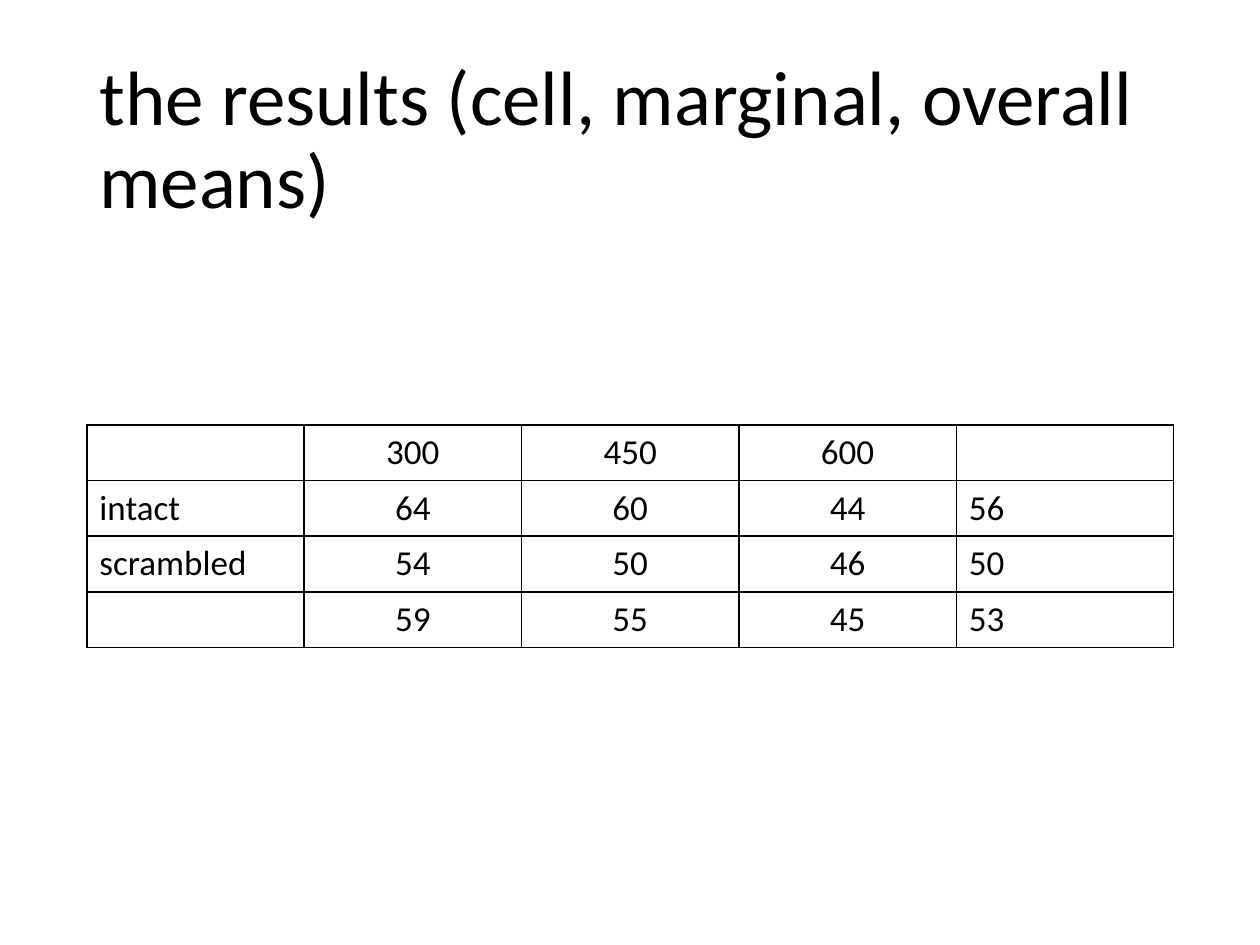
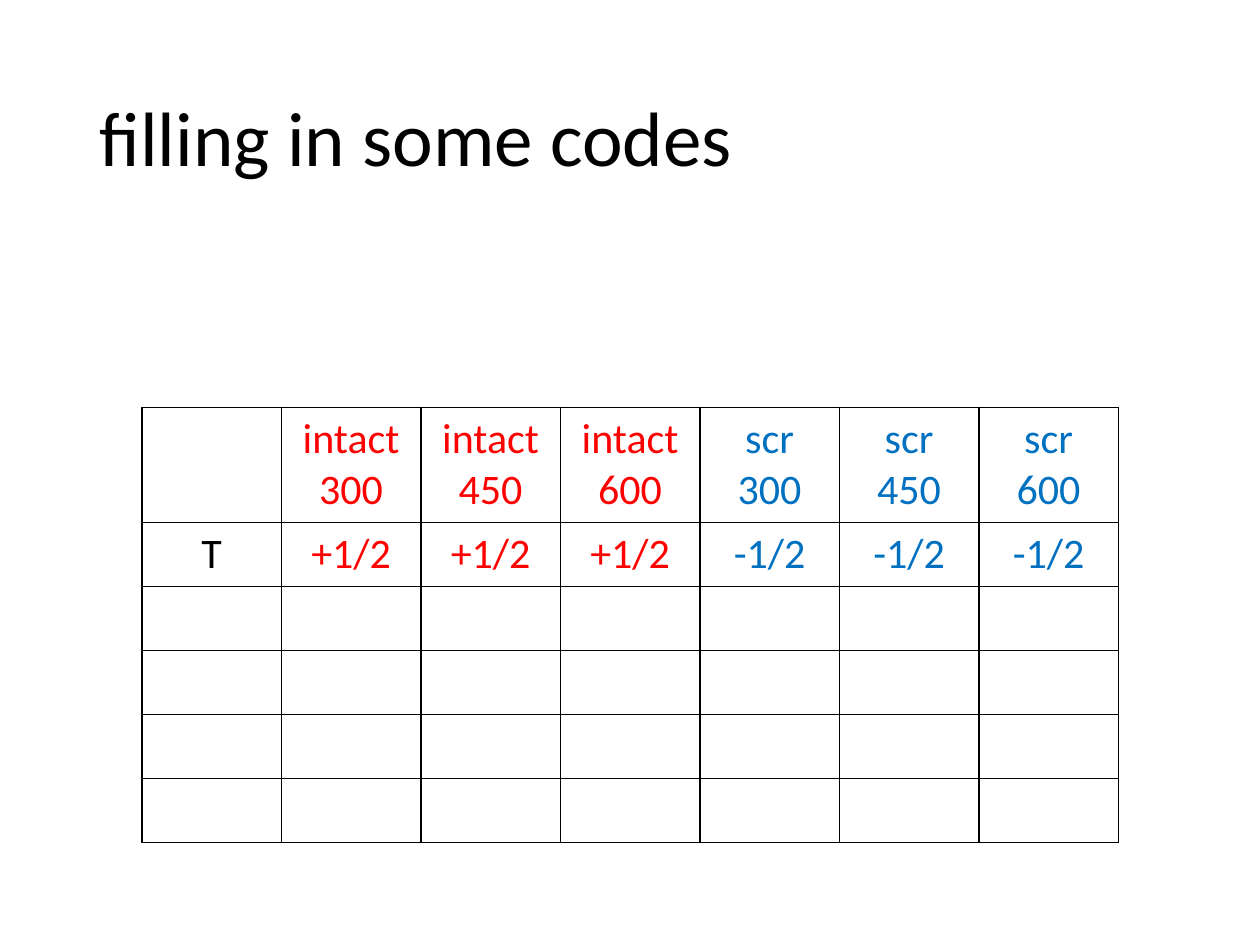
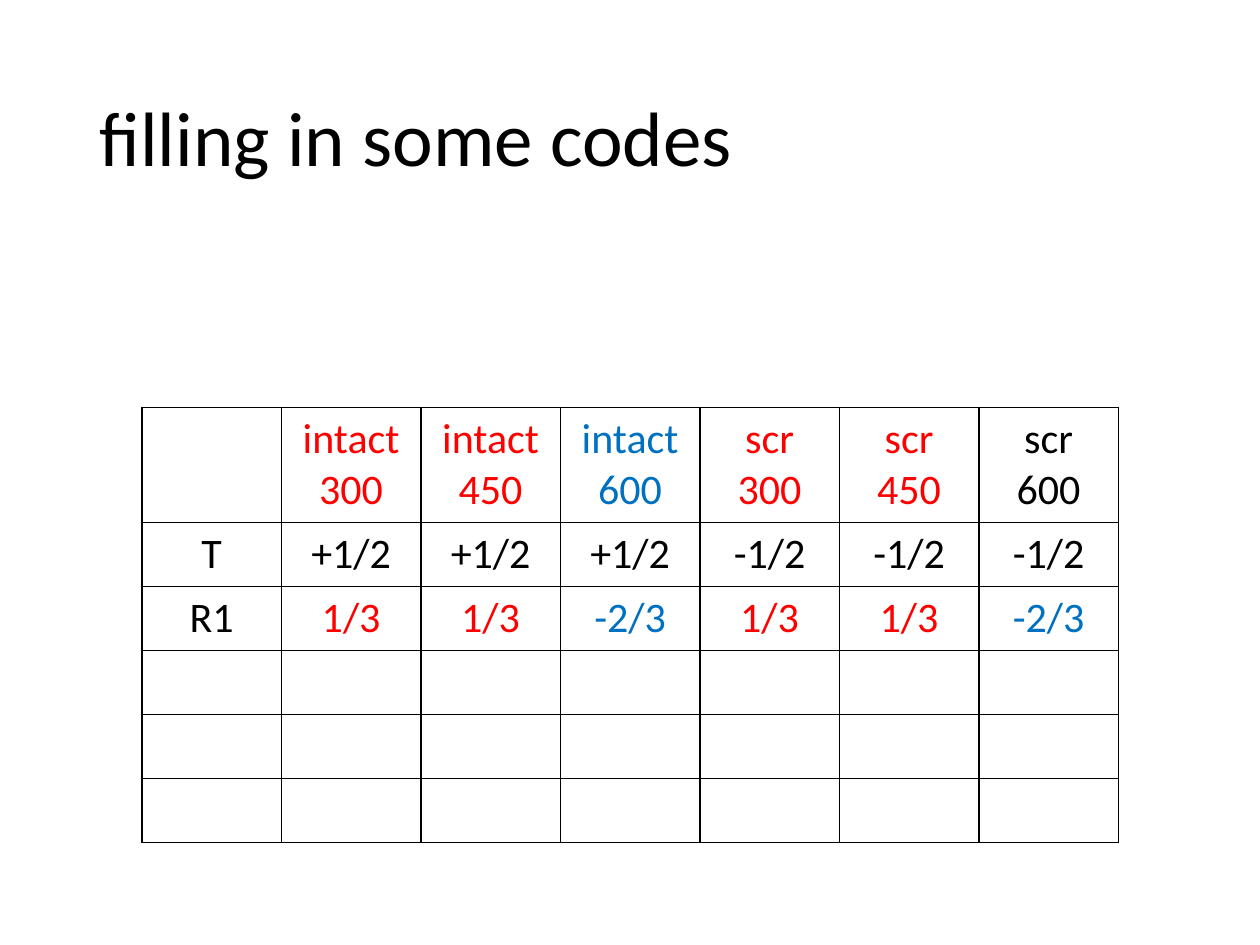
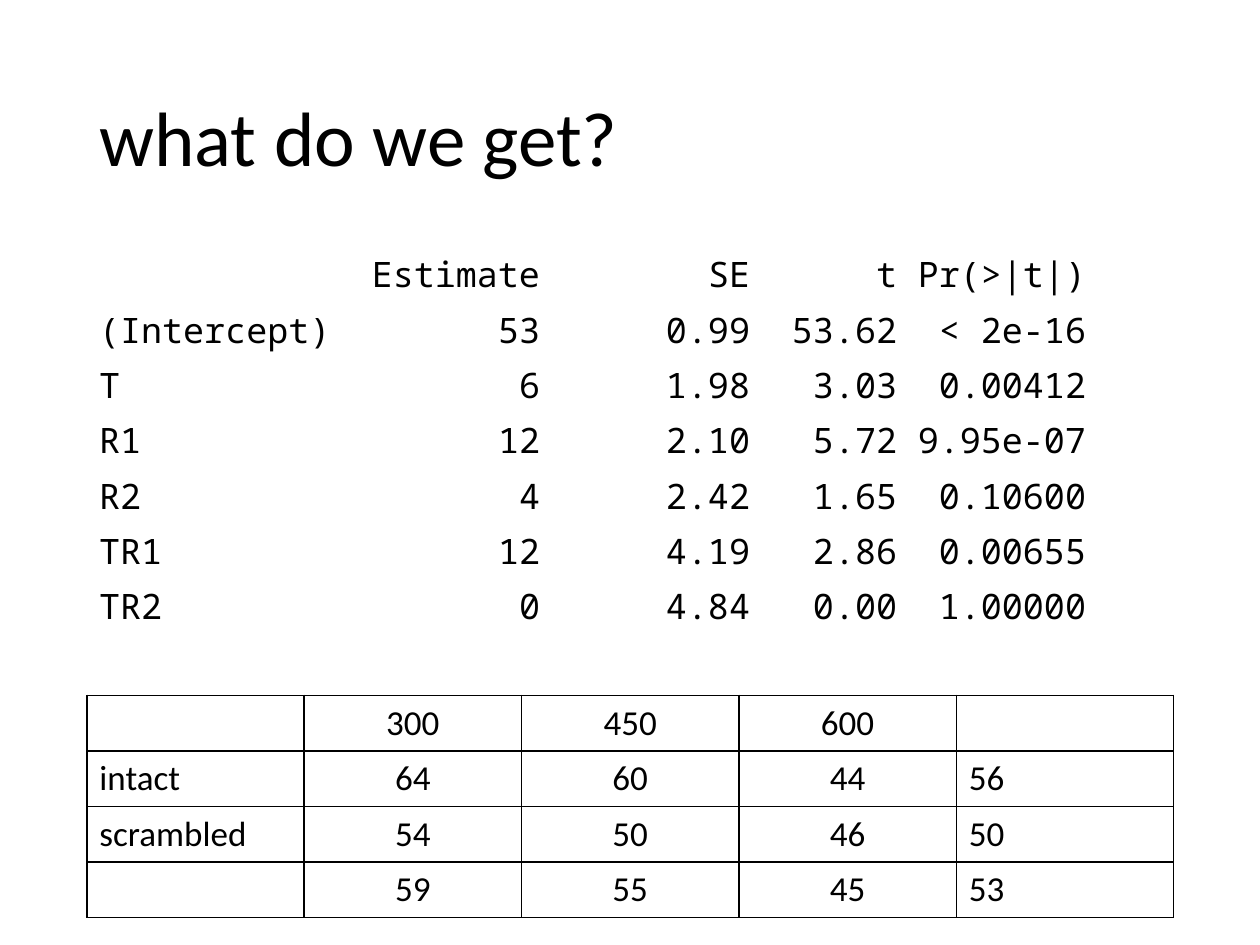
from dataclasses import dataclass

from lxml.etree import SubElement
from pptx import Presentation
from pptx.dml.color import RGBColor
from pptx.enum.text import MSO_ANCHOR, MSO_AUTO_SIZE, PP_ALIGN
from pptx.oxml.ns import qn
from pptx.util import Cm, Pt


@dataclass(frozen=True)
class Theme:
    black: str = "000000"
    red: str = "FF0000"
    blue: str = "0070C0"
    font: str = "Calibri"
    mono: str = "Noto Sans Mono"
    title_size: int = 44
    code_size: int = 24
    text_size: int = 20
    border: int = 1


THEME = Theme()
INKS = {"k": THEME.black, "r": THEME.red, "b": THEME.blue}
LEFT, WIDTH = Cm(1.75), Cm(21.91)


def add_span(para, text, size, font=THEME.font, color=THEME.black):
    span = para.add_run()
    span.text = text
    span.font.name = font
    span.font.size = Pt(size)
    span.font.color.rgb = RGBColor.from_string(color)


def add_grid(slide, left, top, width, heights, rows, size, centred, inks=()):
    """Add a bordered table; inks holds one colour letter per cell, row by row."""
    frame = slide.shapes.add_table(len(rows), len(rows[0]), left, top, width, sum(heights))
    table = frame.table
    table.first_row = table.horz_banding = False
    for column in table.columns:
        column.width = width // len(rows[0])
    for r, (height, texts) in enumerate(zip(heights, rows)):
        table.rows[r].height = height
        for c, text in enumerate(texts):
            cell = table.cell(r, c)
            properties = cell._tc.get_or_add_tcPr()
            for side in ("a:lnL", "a:lnR", "a:lnT", "a:lnB"):
                line = SubElement(properties, qn(side), w=str(Pt(THEME.border)))
                fill = SubElement(line, qn("a:solidFill"))
                SubElement(fill, qn("a:srgbClr"), val=THEME.black)
            cell.fill.background()
            if not text:
                continue
            ink = INKS[inks[r][c]] if inks else THEME.black
            for i, part in enumerate(text.split("\n")):
                para = cell.text_frame.add_paragraph() if i else cell.text_frame.paragraphs[0]
                para.alignment = PP_ALIGN.CENTER if c in centred else PP_ALIGN.LEFT
                add_span(para, part, size, color=ink)


deck = Presentation()
deck.slide_width, deck.slide_height = Cm(25.4), Cm(19.05)
TITLE_ONLY = deck.slide_layouts[5]

# Titles
slides = []
for title_text in (
    "the results (cell, marginal, overall means)",
    "filling in some codes",
    "filling in some codes",
    "what do we get?",
):
    slide = deck.slides.add_slide(TITLE_ONLY)
    title = slide.shapes.title
    title.left, title.top, title.width, title.height = LEFT, Cm(1.02), WIDTH, Cm(3.68)
    title.text_frame.auto_size = MSO_AUTO_SIZE.NONE
    title.text_frame.vertical_anchor = MSO_ANCHOR.MIDDLE
    para = title.text_frame.paragraphs[0]
    para.alignment = PP_ALIGN.LEFT
    para.line_spacing = 0.9
    add_span(para, title_text, THEME.title_size)
    slides.append(slide)
results_slide, first_code_slide, second_code_slide, estimates_slide = slides

# Regression output, with right-aligned columns counted in characters
estimates = [
    ("", "Estimate", "SE", "t", "Pr(>|t|)"),
    ("(Intercept)", "53", "0.99", "53.62", "< 2e-16"),
    ("T", "6", "1.98", "3.03", "0.00412"),
    ("R1", "12", "2.10", "5.72", "9.95e-07"),
    ("R2", "4", "2.42", "1.65", "0.10600"),
    ("TR1", "12", "4.19", "2.86", "0.00655"),
    ("TR2", "0", "4.84", "0.00", "1.00000"),
]
COLUMN_ENDS = (21, 31, 38, 47)
CHARACTER_WIDTH = Pt(THEME.text_size * 0.6)
box = estimates_slide.shapes.add_textbox(LEFT, Cm(5.07), WIDTH, Cm(12.09))
box.text_frame.word_wrap = True
box.text_frame.auto_size = MSO_AUTO_SIZE.NONE
for i, fields in enumerate(estimates):
    para = box.text_frame.add_paragraph() if i else box.text_frame.paragraphs[0]
    para.line_spacing = 0.9
    para.space_before = Pt(10)
    tabs = SubElement(para._p.get_or_add_pPr(), qn("a:tabLst"))
    for end in COLUMN_ENDS:
        SubElement(tabs, qn("a:tab"), pos=str(end * CHARACTER_WIDTH), algn="r")
    add_span(para, "\t".join(fields), THEME.text_size, THEME.mono)

# Cell, marginal and overall means
means = [
    ("", "300", "450", "600", ""),
    ("intact", "64", "60", "44", "56"),
    ("scrambled", "54", "50", "46", "50"),
    ("", "59", "55", "45", "53"),
]
for slide, top in ((results_slide, Cm(8.57)), (estimates_slide, Cm(14.02))):
    add_grid(slide, LEFT, top, WIDTH, [Cm(1.12)] * 4, means, THEME.text_size, range(1, 4))

# Contrast codes
conditions = [""] + [f"{text}\n{rate}" for text in ("intact", "scr") for rate in (300, 450, 600)]
text_codes = ["T"] + ["+1/2"] * 3 + ["-1/2"] * 3
rate_codes = ["R1"] + ["1/3", "1/3", "-2/3"] * 2
blank = [""] * 7
code_heights = [Cm(2.31)] + [Cm(1.29)] * 5
for slide, codes, inks in (
    (first_code_slide, [text_codes], ("krrrbbb", "krrrbbb")),
    (second_code_slide, [text_codes, rate_codes], ("krrbrrk", "kkkkkkk", "krrbrrb")),
):
    rows = [conditions] + codes + [blank] * (5 - len(codes))
    add_grid(slide, Cm(2.86), Cm(8.21), Cm(19.69), code_heights, rows,
             THEME.code_size, range(7), inks)

deck.save("out.pptx")
